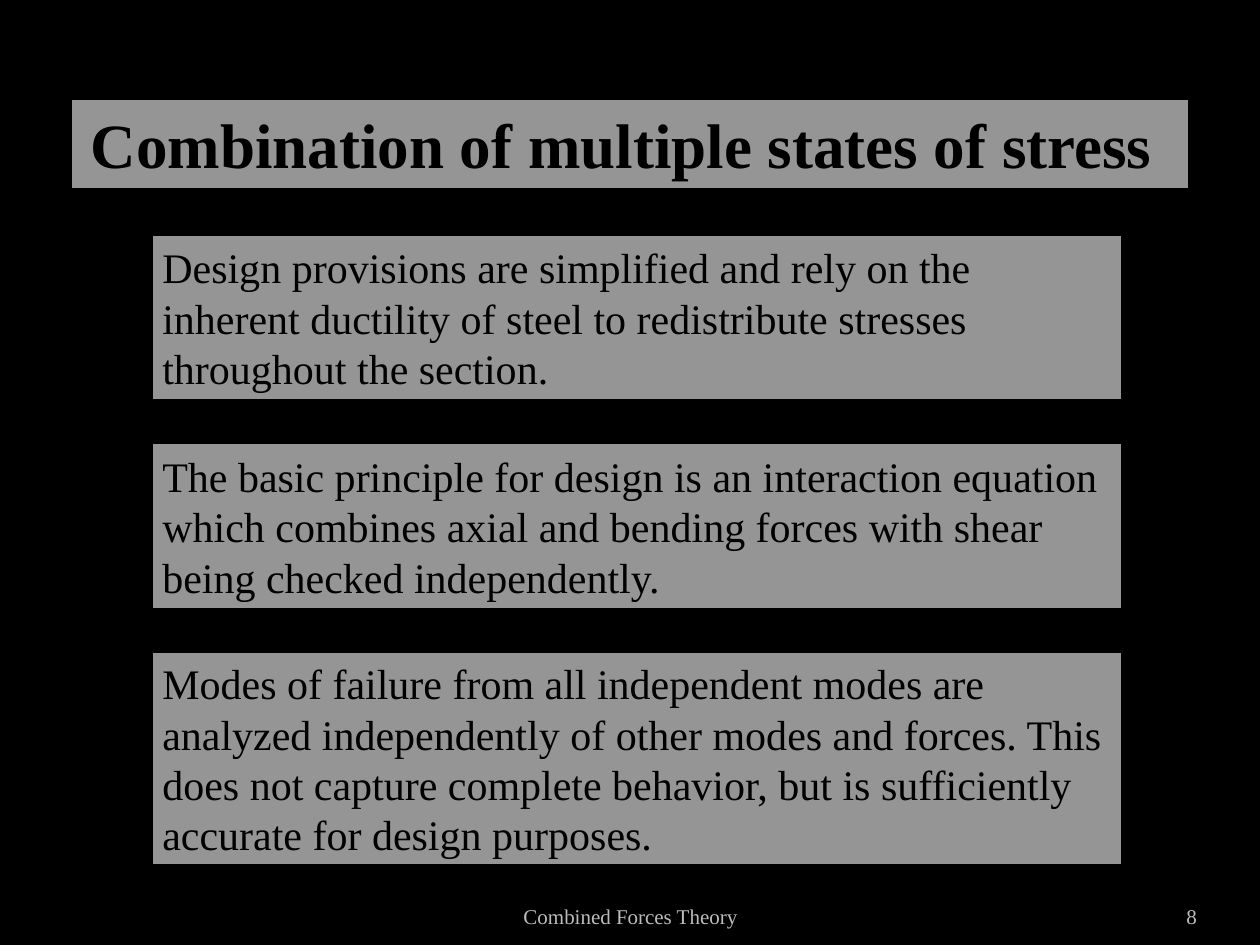
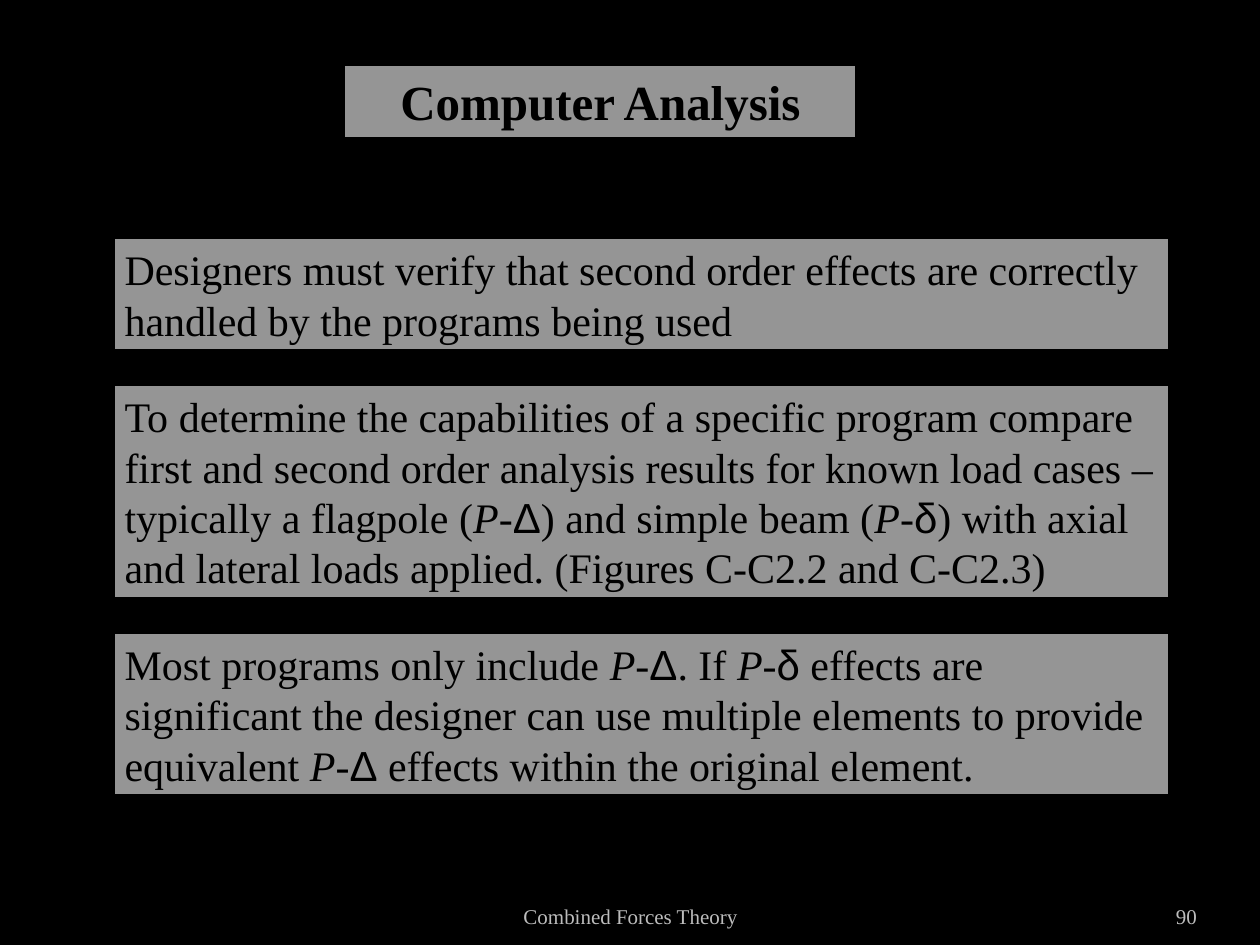
from lxml import etree
from pptx import Presentation
from pptx.dml.color import RGBColor
from pptx.enum.shapes import MSO_SHAPE as Shape
from pptx.enum.text import MSO_ANCHOR as Anchor, MSO_AUTO_SIZE as AutoSize, PP_ALIGN as Align
from pptx.oxml.ns import qn
from pptx.util import Inches, Pt

CELL = Inches(0.1)  # the slide is a grid of 100 columns by 75 rows
COLUMNS, ROWS = 100, 75
BLACK, PANEL, FOOTER_GRAY = "000000", "F2F2F2", "BCBCBC"
SERIF, SANS = "Times New Roman", "Arial"
PANEL_OPACITY = 62000
SPAN_FORMATS = {"P": {"italic": True}, "Δ": {"name": SANS}, "δ": {"name": SANS}}

slides = [
    {
        "title": "Combination of multiple states of stress",
        "title_grid": (5.5, 7.7, 89, 7.4), "title_size": 36,
        "title_align": Align.LEFT, "title_inset": 1.7,
        "left": 11.9, "top": 18.5, "width": 77.3, "gap": 3.15,
        "panels": [
            (13.4, "Design provisions are simplified and rely on the inherent ductility of "
                   "steel to redistribute stresses throughout the section."),
            (13.4, "The basic principle for design is an interaction equation which combines "
                   "axial and bending forces with shear being checked independently."),
            (17.2, "Modes of failure from all independent modes are analyzed independently of "
                   "other modes and forces. This does not capture complete behavior, but is "
                   "sufficiently accurate for design purposes."),
        ],
        "number": "8",
    },
    {
        "title": "Computer Analysis",
        "title_grid": (27.2, 5, 40.9, 6.1), "title_size": 28,
        "title_align": Align.CENTER, "title_inset": 1,
        "left": 8.9, "top": 18.8, "width": 84, "gap": 2.5,
        "panels": [
            (9.1, "Designers must verify that second order effects are correctly handled by "
                  "the programs being used"),
            (17.2, "To determine the capabilities of a specific program compare first and "
                   "second order analysis results for known load cases – typically a flagpole "
                   "(|P|-|Δ|) and simple beam (|P|-|δ|) with axial and lateral loads applied. "
                   "(Figures C-C2.2 and C-C2.3)"),
            (13.1, "Most programs only include |P|-|Δ|. If |P|-|δ| effects are significant the "
                   "designer can use multiple elements to provide equivalent |P|-|Δ| effects "
                   "within the original element."),
        ],
        "number": "90",
    },
]


def write(box, text, size, color=BLACK, align=Align.LEFT, anchor=Anchor.MIDDLE,
          inset=1, bold=False):
    """Fill a box with text; bars in the text separate its spans."""
    frame = box.text_frame
    settings = {"word_wrap": True, "auto_size": AutoSize.NONE, "vertical_anchor": anchor,
                "margin_left": int(inset * CELL), "margin_right": int(min(inset, 1) * CELL),
                "margin_top": CELL // 2, "margin_bottom": CELL // 2}
    for name, value in settings.items():
        setattr(frame, name, value)
    para = frame.paragraphs[0]
    para.alignment = align
    for piece in text.split("|"):
        span = para.add_run()
        span.text = piece
        font = {"name": SERIF, "size": Pt(size), "bold": bold, "italic": False}
        for name, value in (font | SPAN_FORMATS.get(piece, {})).items():
            setattr(span.font, name, value)
        span.font.color.rgb = RGBColor.from_string(color)


def paint_panel(box):
    """Give a box the translucent light fill and the black outline."""
    box.fill.solid()
    box.fill.fore_color.rgb = RGBColor.from_string(PANEL)
    color = next(box._element.spPr.iter(qn("a:srgbClr")))
    etree.SubElement(color, qn("a:alpha"), val=str(PANEL_OPACITY))
    box.line.color.rgb = RGBColor.from_string(BLACK)
    box.line.width = Pt(3)


deck = Presentation()
deck.slide_width, deck.slide_height = COLUMNS * CELL, ROWS * CELL
background = deck.slide_master.background.fill
background.solid()
background.fore_color.rgb = RGBColor.from_string(BLACK)
title_only = deck.slide_layouts.get_by_name("Title Only")

for content in slides:
    page = deck.slides.add_slide(title_only)

    title = page.shapes.title
    title.left, title.top, title.width, title.height = (
        int(cells * CELL) for cells in content["title_grid"])
    paint_panel(title)
    write(title, content["title"], content["title_size"], align=content["title_align"],
          inset=content["title_inset"], bold=True)

    top = content["top"]
    for height, text in content["panels"]:
        grid = (content["left"], top, content["width"], height)
        panel = page.shapes.add_shape(Shape.RECTANGLE, *(int(cells * CELL) for cells in grid))
        panel.shadow.inherit = False
        paint_panel(panel)
        write(panel, text, 24)
        top += height + content["gap"]

    for left, width, text, align, inset in (
            (34.2, 31.7, "Combined Forces Theory", Align.CENTER, 1),
            (86.7, 8.3, content["number"], Align.RIGHT, 0)):
        footer = page.shapes.add_textbox(
            *(int(cells * CELL) for cells in (left, 70.2, width, 4)))
        write(footer, text, 12, FOOTER_GRAY, align, Anchor.BOTTOM, inset)

deck.save("out.pptx")
